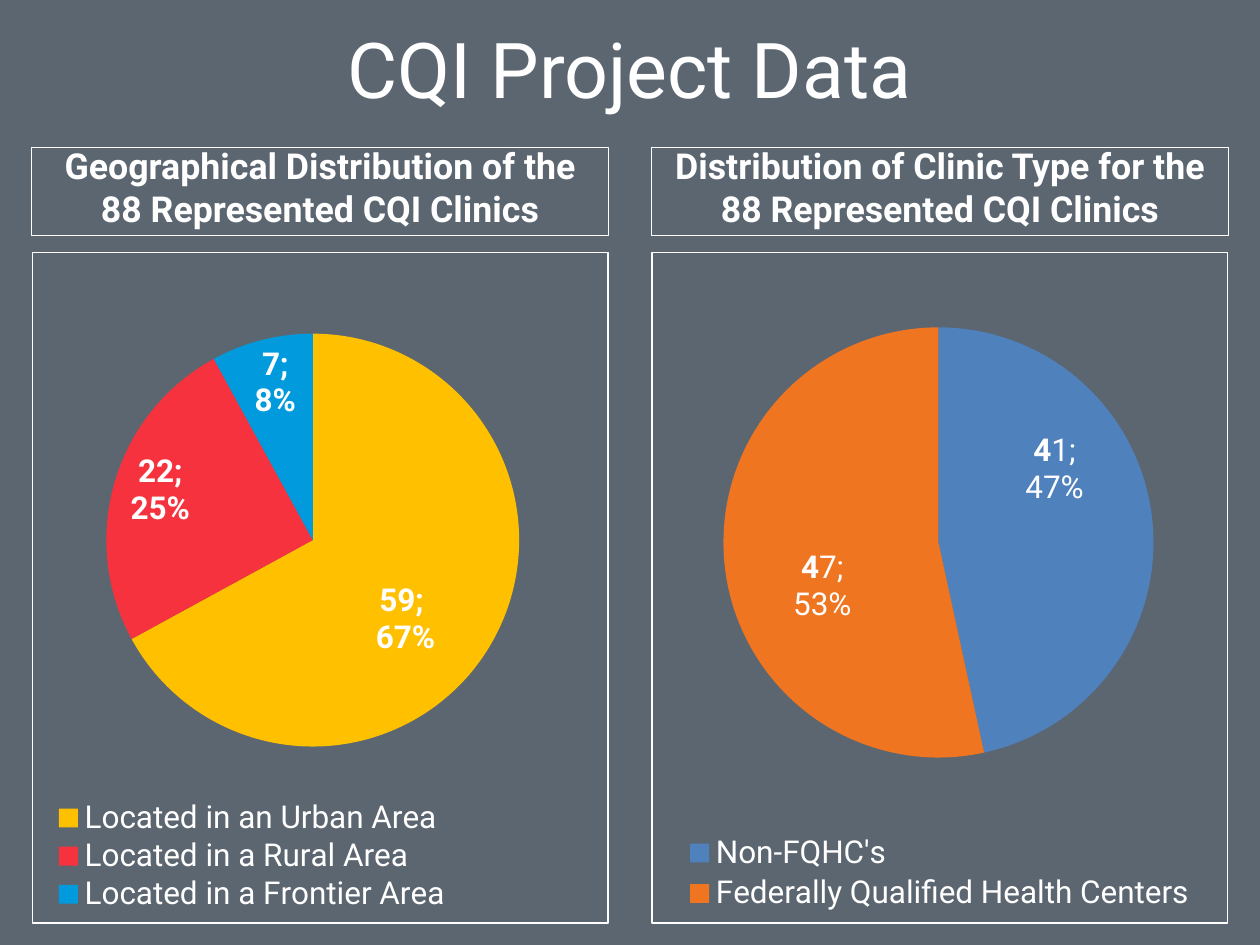
from lxml import etree
from pptx import Presentation
from pptx.chart.data import CategoryChartData
from pptx.dml.color import RGBColor
from pptx.enum.chart import XL_CHART_TYPE, XL_LABEL_POSITION, XL_LEGEND_POSITION
from pptx.enum.text import MSO_ANCHOR, PP_ALIGN
from pptx.oxml import parse_xml
from pptx.oxml.ns import nsdecls, qn
from pptx.util import Pt

PIE = XL_CHART_TYPE.PIE
LABEL_CENTER = XL_LABEL_POSITION.CENTER
LEGEND_RIGHT = XL_LEGEND_POSITION.RIGHT
CENTER = PP_ALIGN.CENTER
MIDDLE, BOTTOM = MSO_ANCHOR.MIDDLE, MSO_ANCHOR.BOTTOM
WHITE = RGBColor(0xFF, 0xFF, 0xFF)
BLACK = RGBColor(0x00, 0x00, 0x00)
SLATE = RGBColor(0x5C, 0x66, 0x70)
GOLD = RGBColor(0xFF, 0xC0, 0x00)
RED = RGBColor(0xF6, 0x32, 0x3E)
SKY = RGBColor(0x00, 0x9A, 0xDD)
BLUE = RGBColor(0x4F, 0x81, 0xBD)
ORANGE = RGBColor(0xEF, 0x75, 0x21)
FONT, CHART_FONT = "Roboto", "Calibri"
PX = 9144
PER_MILLE = 1000

TITLE = "CQI Project Data"
PANELS = [
    {
        "heading": "Geographical Distribution of the 88 Represented CQI Clinics",
        "slices": [
            ("Located in an Urban Area", 59, GOLD, [("59; ", True)], [("67%", True)], (7, 40)),
            ("Located in a Rural Area", 22, RED, [("22;", True)], [("25%", True)], (-93, -31)),
            ("Located in a Frontier Area", 7, SKY, [("7;", True)], [("8%", True)], (-21, -85)),
        ],
        "labels_bold": False,
        "pie": (129, 110, 717, 638),
        "legend": (31, 814, 701, 173),
    },
    {
        "heading": "Distribution of Clinic Type for the 88 Represented CQI Clinics",
        "slices": [
            ("Non-FQHC's", 41, BLUE, [("4", True), ("1;", False)], [("47%", False)], (16, -92)),
            ("Federally Qualified Health Centers", 47, ORANGE,
             [("4", True), ("7;", False)], [("53%", False)], (-16, 49)),
        ],
        "labels_bold": True,
        "pie": (124, 111, 747, 643),
        "legend": (49, 863, 900, 126),
    },
]
SLIDE_W, SLIDE_H = 1000, 750
PANEL_W = 458
MARGIN = 25
HEADING_TOP, HEADING_H = 117, 70
CHART_TOP, CHART_H = 200, 533


def style(font, size, bold=False, name=FONT, color=WHITE):
    font.name, font.size, font.bold = name, Pt(size), bold
    font.color.rgb = color


def add_text(slide, text, box, size, bold, anchor):
    shape = slide.shapes.add_textbox(*(n * PX for n in box))
    frame = shape.text_frame
    frame.word_wrap, frame.vertical_anchor = True, anchor
    paragraph = frame.paragraphs[0]
    paragraph.text, paragraph.alignment = text, CENTER
    style(paragraph.font, size, bold)
    return shape


def set_layout(parent, index, box, inner=False):
    for old in parent.findall(qn("c:layout")):
        parent.remove(old)
    layout = etree.Element(qn("c:layout"))
    manual = etree.SubElement(layout, qn("c:manualLayout"))
    if inner:
        etree.SubElement(manual, qn("c:layoutTarget"), val="inner")
    if len(box) == 4:
        for mode in ("xMode", "yMode"):
            etree.SubElement(manual, qn(f"c:{mode}"), val="edge")
    for key, share in zip("xywh", box):
        etree.SubElement(manual, qn(f"c:{key}"), val=str(share / PER_MILLE))
    parent.insert(index, layout)


def add_pie(slide, panel, left):
    slices = panel["slices"]
    data = CategoryChartData()
    data.categories = [entry[0] for entry in slices]
    data.add_series("Series 1", [entry[1] for entry in slices])
    box = (left, CHART_TOP, PANEL_W, CHART_H)
    chart = slide.shapes.add_chart(PIE, *(n * PX for n in box), data).chart
    style(chart.font, 10, name=CHART_FONT, color=BLACK)
    chart.has_title = False
    chart.has_legend = True
    chart.legend.position = LEGEND_RIGHT
    chart.legend.include_in_layout = False
    style(chart.legend.font, 18)
    pie = chart.plots[0]
    pie.vary_by_categories = True
    series = pie.series[0]
    labels = series.data_labels
    style(labels.font, 18, panel["labels_bold"])
    labels.show_value = labels.show_percentage = True

    for point_index, (_, _, color, count, percent, _) in enumerate(slices):
        point = series.points[point_index]
        point.format.fill.solid()
        point.format.fill.fore_color.rgb = color
        point.format.line.fill.background()
        frame = point.data_label.text_frame
        for paragraph, pieces in ((frame.paragraphs[0], count), (frame.add_paragraph(), percent)):
            for text, bold in pieces:
                run = paragraph.add_run()
                run.text = text
                style(run.font, 18, bold)
        point.data_label.position = LABEL_CENTER

    space = chart.element
    for label, entry in zip(space.xpath(".//c:dLbl"), slices):
        set_layout(label, 1, entry[-1])
        label.find(qn("c:showPercent")).set("val", "1")
    set_layout(space.xpath(".//c:plotArea")[0], 0, panel["pie"], inner=True)
    set_layout(space.xpath(".//c:legend")[0], 1, panel["legend"])
    space.find(qn("c:chart")).addnext(parse_xml(
        f'<c:spPr {nsdecls("c", "a")}><a:noFill/><a:ln w="9525"><a:solidFill>'
        f'<a:srgbClr val="{WHITE}"/></a:solidFill></a:ln></c:spPr>'))


def main():
    """Build the slide with two headed pie charts."""
    deck = Presentation()
    deck.slide_width, deck.slide_height = SLIDE_W * PX, SLIDE_H * PX
    slide = deck.slides.add_slide(deck.slide_layouts[6])
    slide.background.fill.solid()
    slide.background.fill.fore_color.rgb = SLATE
    add_text(slide, TITLE, (50, 0, 900, 108), 44, False, MIDDLE)
    for panel, left in zip(PANELS, (MARGIN, SLIDE_W - MARGIN - PANEL_W)):
        heading = add_text(slide, panel["heading"], (left, HEADING_TOP, PANEL_W, HEADING_H),
                           20.4, True, BOTTOM)
        heading.line.color.rgb = WHITE
        heading.line.width = Pt(0.75)
        add_pie(slide, panel, left)
    deck.save("out.pptx")


if __name__ == "__main__":
    main()
